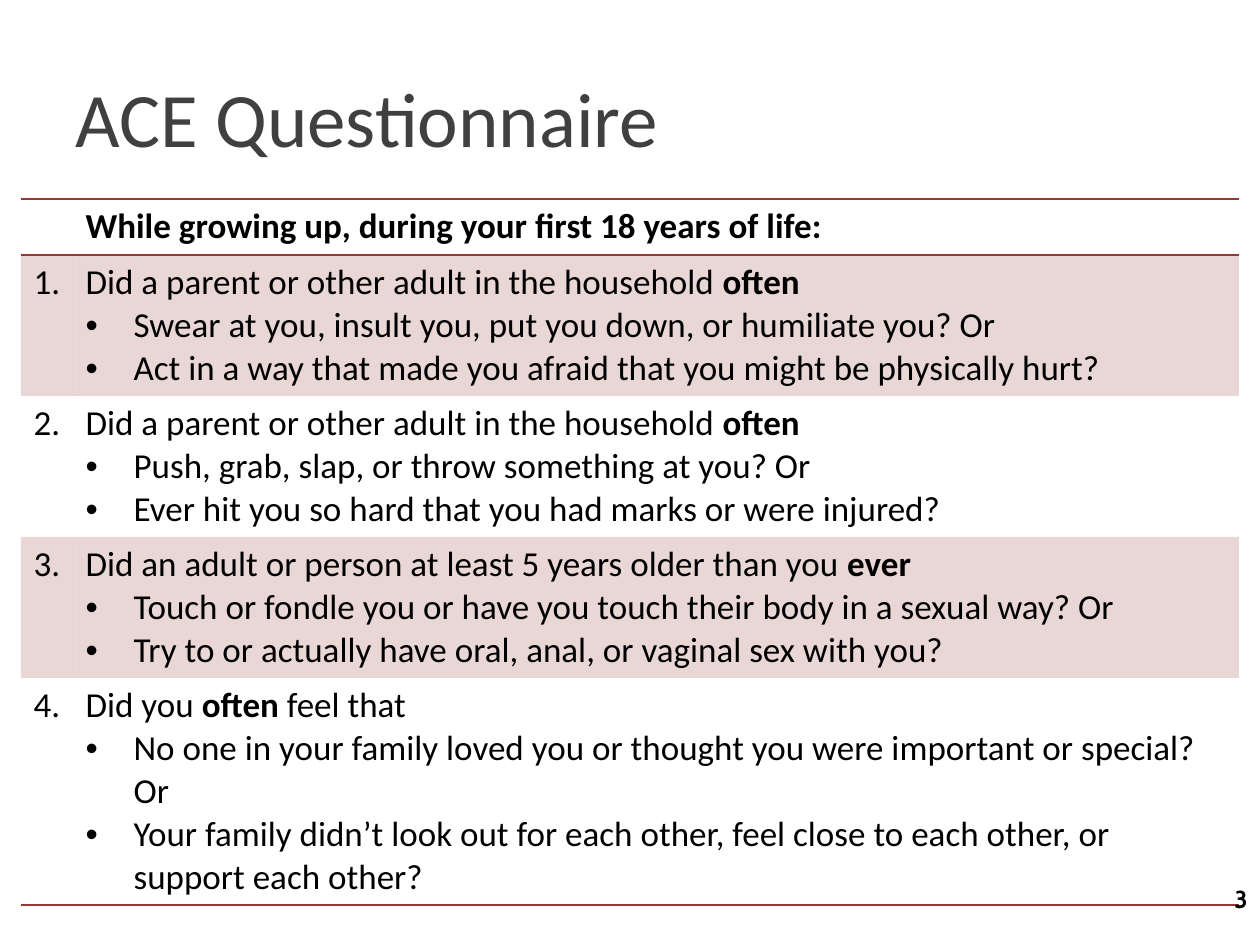
"""Build the ACE Questionnaire slide."""
from dataclasses import dataclass

from lxml import etree
from pptx import Presentation
from pptx import util as u
from pptx.dml import color
from pptx.enum import text
from pptx.oxml import ns

PX = 914400 / 126
COLORS = {"title": "404040", "ink": "000000", "accent": "953734"}
PLAIN_TABLE = "{2D5ABB26-0587-4C30-8999-92F81FD0307C}"
HEADING = "While growing up, during your first 18 years of life:"


@dataclass
class Question:
    lead: str
    stress: str
    tail: str
    options: tuple[str, ...]


QUESTIONS = (
    Question("Did a parent or other adult in the household ", "often", "", (
        "Swear at you, insult you, put you down, or humiliate you? Or",
        "Act in a way that made you afraid that you might be physically hurt?")),
    Question("Did a parent or other adult in the household ", "often", "", (
        "Push, grab, slap, or throw something at you? Or",
        "Ever hit you so hard that you had marks or were injured?")),
    Question("Did an adult or person at least 5 years older than you ", "ever", "", (
        "Touch or fondle you or have you touch their body in a sexual way? Or",
        "Try to or actually have oral, anal, or vaginal sex with you?")),
    Question("Did you ", "often", " feel that", (
        "No one in your family loved you or thought you were important or special? Or",
        "Your family didn’t look out for each other, feel close to each other, or support each other?")),
)
COLUMN_WIDTHS = (52, 1166)
ROW_HEIGHTS = (56, 141, 141, 141, 227)


def px(length: int) -> u.Emu:
    """Turn pixels into EMU."""
    return u.Emu(round(length * PX))


def style(paragraph, size: int, ink: str = "ink", face: str = "Calibri", bold: bool | None = None) -> None:
    """Set the font of a whole paragraph."""
    font = paragraph.font
    font.size, font.name, font.bold = u.Pt(size), face, bold
    font.color.rgb = color.RGBColor.from_string(COLORS[ink])


def add_label(slide, box: tuple[int, int, int, int], words: str, anchor):
    """Add a wrapped text box and return its paragraph."""
    frame = slide.shapes.add_textbox(*map(px, box)).text_frame
    frame.word_wrap = True
    frame.vertical_anchor = anchor
    frame.paragraphs[0].text = words
    return frame.paragraphs[0]


def add_bullet(paragraph) -> None:
    """Give a paragraph a round bullet and a hanging indent."""
    properties = paragraph._p.get_or_add_pPr()
    indent = px(48)
    properties.set("marL", str(indent))
    properties.set("indent", str(-indent))
    bullet_font = etree.Element(ns.qn("a:buFont"), typeface="Arial")
    bullet = etree.Element(ns.qn("a:buChar"), char="•")
    properties.insert(0, bullet_font)
    properties.insert(1, bullet)


def add_rules(cell, sides: str) -> None:
    """Draw one-point accent lines on the given sides of a cell."""
    properties = cell._tc.get_or_add_tcPr()
    for index, side in enumerate(sides):
        line = etree.Element(ns.qn(f"a:ln{side}"), w=str(u.Pt(1)))
        fill = etree.SubElement(line, ns.qn("a:solidFill"))
        etree.SubElement(fill, ns.qn("a:srgbClr"), val=COLORS["accent"])
        properties.insert(index, line)


def paint(cell, shaded: bool) -> None:
    """Fill a cell with a light accent tint or leave it clear."""
    if not shaded:
        cell.fill.background()
        return
    cell.fill.solid()
    cell.fill.fore_color.rgb = color.RGBColor.from_string(COLORS["accent"])
    tint = cell._tc.tcPr.find(".//" + ns.qn("a:srgbClr"))
    etree.SubElement(tint, ns.qn("a:alpha"), val="20000")


def write_question(cell, question: Question) -> None:
    """Write a question with its stressed word and bulleted options."""
    frame = cell.text_frame
    opening = frame.paragraphs[0]
    style(opening, 20)
    for words, bold in ((question.lead, False), (question.stress, True), (question.tail, False)):
        if words:
            run = opening.add_run()
            run.text, run.font.bold = words, bold
    for option in question.options:
        paragraph = frame.add_paragraph()
        paragraph.text = option
        style(paragraph, 20)
        add_bullet(paragraph)


def add_questionnaire(slide) -> None:
    """Add the table of numbered questions."""
    frame = slide.shapes.add_table(len(ROW_HEIGHTS), len(COLUMN_WIDTHS), px(21), px(199),
                                   px(sum(COLUMN_WIDTHS)), px(sum(ROW_HEIGHTS)))
    table = frame.table
    table.first_row = table.horz_banding = False
    table._tbl.tblPr.find(ns.qn("a:tableStyleId")).text = PLAIN_TABLE
    for column, width in zip(table.columns, COLUMN_WIDTHS):
        column.width = px(width)
    for row, height in zip(table.rows, ROW_HEIGHTS):
        row.height = px(height)

    heading = table.cell(0, 1).text_frame.paragraphs[0]
    heading.text = HEADING
    style(heading, 20, bold=True)
    for number, question in enumerate(QUESTIONS, 1):
        label = table.cell(number, 0).text_frame.paragraphs[0]
        label.text = f"{number}."
        style(label, 20)
        write_question(table.cell(number, 1), question)

    rules = {0: "TB", len(QUESTIONS): "B"}
    for index, row in enumerate(table.rows):
        for cell in row.cells:
            paint(cell, index % 2 == 1)
            add_rules(cell, rules.get(index, ""))


def main() -> None:
    """Build and save the slide."""
    deck = Presentation()
    deck.slide_width, deck.slide_height = px(1260), px(945)
    slide = deck.slides.add_slide(deck.slide_layouts[6])
    title = add_label(slide, (63, 38, 1134, 158), "ACE Questionnaire", text.MSO_ANCHOR.MIDDLE)
    style(title, 44, "title")
    add_questionnaire(slide)
    page = add_label(slide, (1092, 878, 168, 64), "3", text.MSO_ANCHOR.TOP)
    page.alignment = text.PP_ALIGN.RIGHT
    style(page, 14, face="Cabin", bold=True)
    deck.save("out.pptx")


if __name__ == "__main__":
    main()
